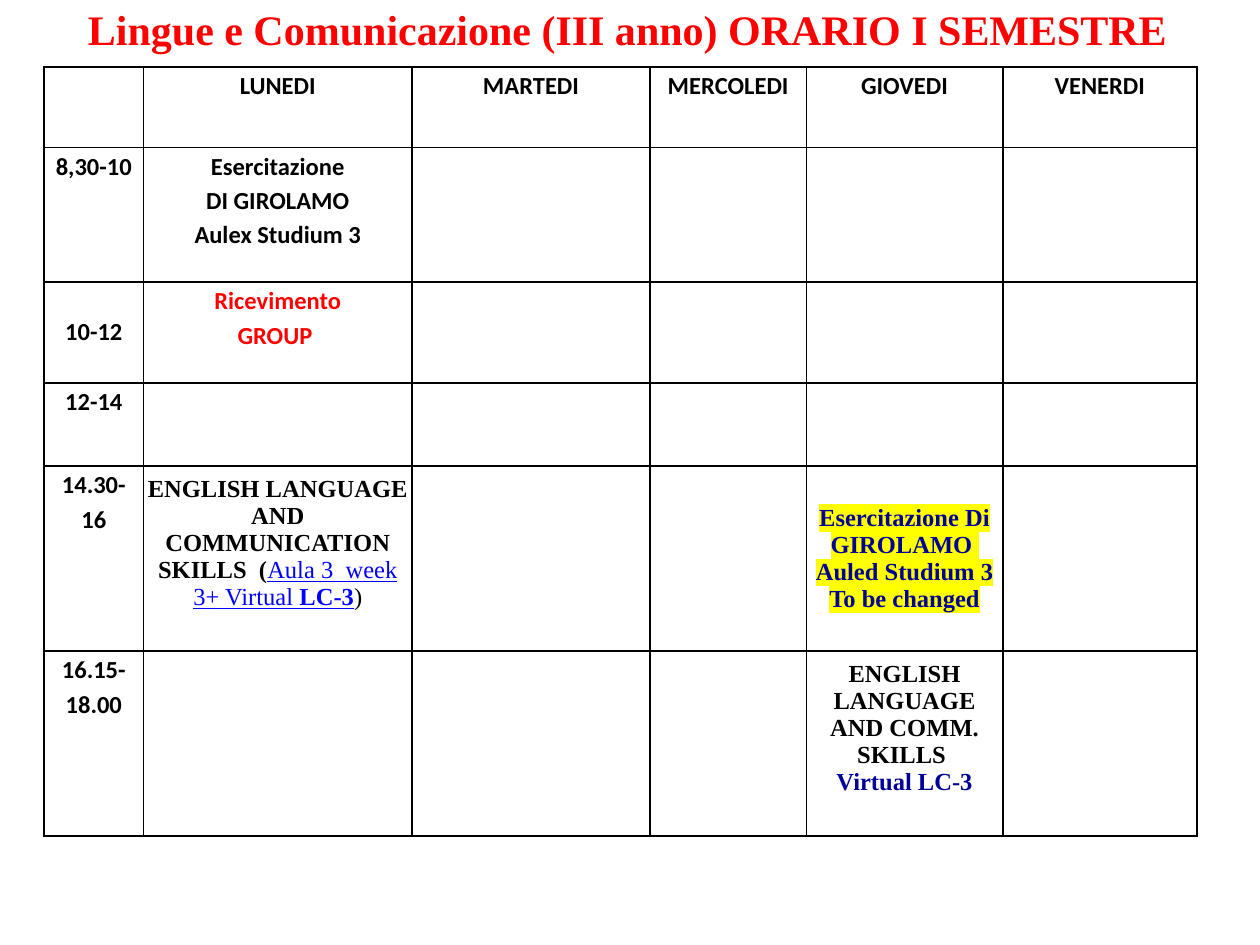
from lxml import etree
from pptx import Presentation
from pptx.dml.color import RGBColor
from pptx.enum.text import MSO_ANCHOR, MSO_AUTO_SIZE, PP_ALIGN
from pptx.oxml.ns import qn
from pptx.util import Inches, Pt

CENTER = PP_ALIGN.CENTER
TOP, MIDDLE = MSO_ANCHOR.TOP, MSO_ANCHOR.MIDDLE
GROW = MSO_AUTO_SIZE.SHAPE_TO_FIT_TEXT
SANS, SERIF = "Calibri", "Times New Roman"
BLACK, RED, BLUE, NAVY, YELLOW = "000000", "FF0000", "0000FF", "000099", "FFFF00"
LINE_HEIGHT = 0.24


def add_run(paragraph, text, font, size=14, color=BLACK, bold=True,
            underline=False, highlight=None):
    run = paragraph.add_run()
    run.text = text
    run.font.name, run.font.size = font, Pt(size)
    run.font.bold, run.font.underline = bold, underline
    run.font.color.rgb = RGBColor.from_string(color)
    if highlight:
        mark = etree.Element(qn("a:highlight"))
        etree.SubElement(mark, qn("a:srgbClr"), val=highlight)
        run.font._element.find(qn("a:solidFill")).addnext(mark)


def add_borders(cell):
    properties = cell._tc.get_or_add_tcPr()
    for side in ("a:lnL", "a:lnR", "a:lnT", "a:lnB"):
        line = etree.SubElement(properties, qn(side), w=str(Pt(1)))
        fill = etree.SubElement(line, qn("a:solidFill"))
        etree.SubElement(fill, qn("a:srgbClr"), val=BLACK)


presentation = Presentation()
presentation.slide_width, presentation.slide_height = Inches(10), Inches(7.5)
slide = presentation.slides.add_slide(presentation.slide_layouts[6])

# Title
title = slide.shapes.add_textbox(Inches(0.6), Inches(-0.02), Inches(9.13), Inches(0.51))
title.text_frame.word_wrap = True
title.text_frame.auto_size = GROW
add_run(title.text_frame.paragraphs[0],
        "Lingue e Comunicazione (III anno) ORARIO I SEMESTRE", SERIF, 24, RED)

# Timetable grid
columns = [0.79, 2.13, 1.89, 1.24, 1.56, 1.54]
rows = [0.64, 1.07, 0.8, 0.66, 1.46, 1.46]
frame = slide.shapes.add_table(len(rows), len(columns), Inches(0.35), Inches(0.53),
                               Inches(sum(columns)), Inches(sum(rows)))
table = frame.table
table.first_row = table.horz_banding = False
for column, width in zip(table.columns, columns):
    column.width = Inches(width)
for row, height in zip(table.rows, rows):
    row.height = Inches(height)
for cell in table.iter_cells():
    add_borders(cell)
    cell.fill.background()

# Days, hours and short entries: one run per paragraph
days = ["LUNEDI", "MARTEDI", "MERCOLEDI", "GIOVEDI", "VENERDI"]
hours = ["8,30-10", "10-12", "12-14", "14.30-16", "16.15-18.00"]
entries = {(0, i): [[(day, {})]] for i, day in enumerate(days, 1)}
entries.update({(i, 0): [[(hour, {})]] for i, hour in enumerate(hours, 1)})
entries[1, 1] = [[(text, {})] for text in
                 ("Esercitazione", "DI GIROLAMO", "Aulex Studium 3")]
entries[2, 1] = [[(text, {"color": RED})] for text in ("Ricevimento", "GROUP ")]

# Lessons: centred vertically, in the serif font
lessons = {
    (4, 1): [[("ENGLISH LANGUAGE AND COMMUNICATION SKILLS  (", {}),
              ("Aula 3  week 3+ Virtual ", {"color": BLUE, "bold": False, "underline": True}),
              ("LC-3", {"color": BLUE, "underline": True}),
              (")", {"bold": False})]],
    (4, 4): [[(text, {"color": NAVY, "highlight": YELLOW})] for text in
             ("Esercitazione Di GIROLAMO ", "Auled Studium 3", "To be changed")],
    (5, 4): [[("ENGLISH LANGUAGE AND COMM. SKILLS ", {})],
             [("Virtual LC-3", {"color": NAVY})]],
}

# Cell text
for group, font, anchor, spacing, side, edge in (
        (entries, SANS, TOP, 1.15, 0.07, 0), (lessons, SERIF, MIDDLE, 1, 0.03, 0.03)):
    for (row, column), paragraphs in group.items():
        cell = table.cell(row, column)
        cell.vertical_anchor = anchor
        cell.margin_left = cell.margin_right = Inches(side)
        cell.margin_top = cell.margin_bottom = Inches(edge)
        for i, runs in enumerate(paragraphs):
            text_frame = cell.text_frame
            paragraph = text_frame.add_paragraph() if i else text_frame.paragraphs[0]
            paragraph.alignment, paragraph.line_spacing = CENTER, spacing
            for text, style in runs:
                add_run(paragraph, text, font, **style)

# Entries that sit one line lower or higher
table.cell(2, 0).margin_top = Inches(LINE_HEIGHT)
for position in ((4, 1), (5, 4)):
    table.cell(*position).margin_bottom = Inches(0.03 + LINE_HEIGHT)

presentation.save("out.pptx")
